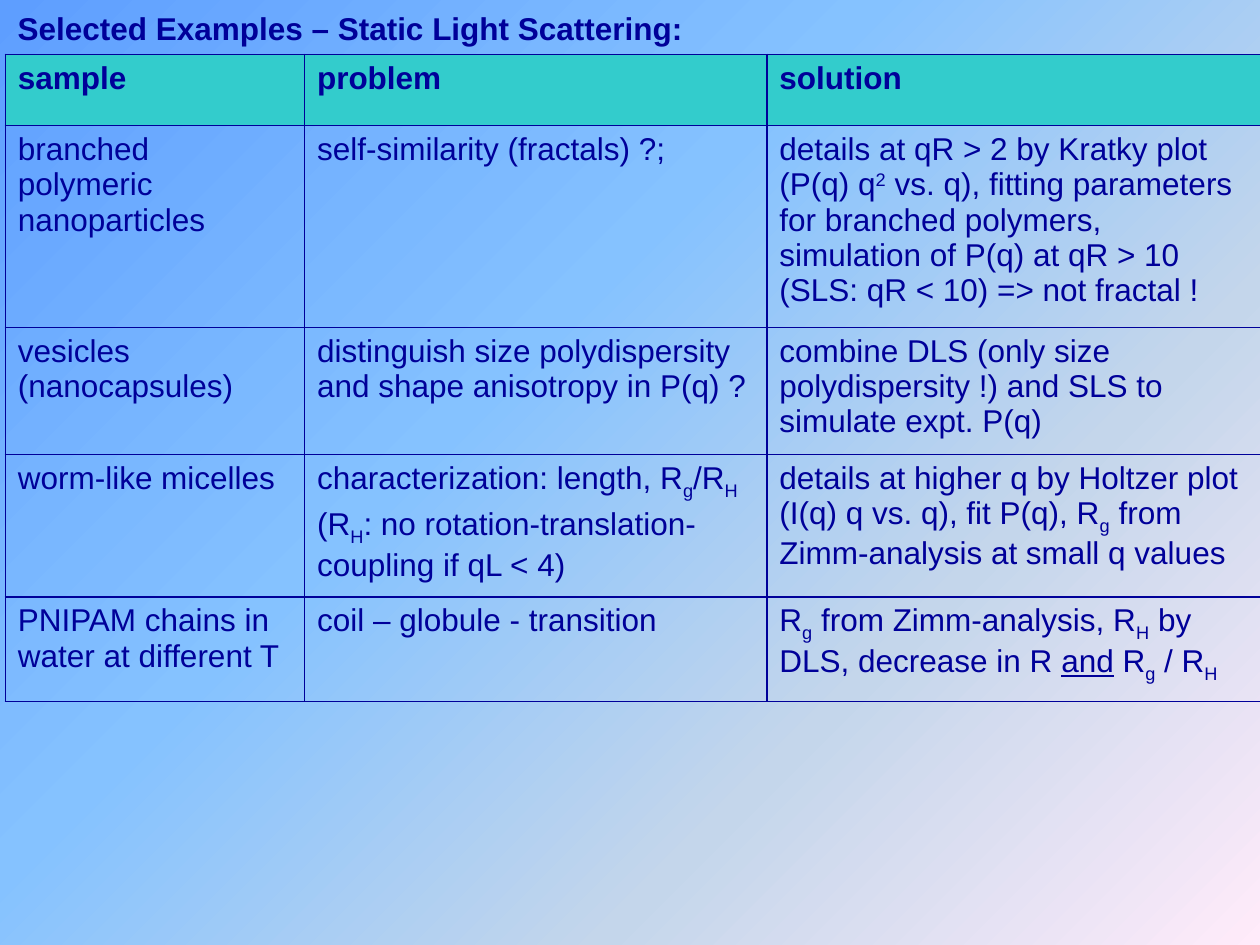
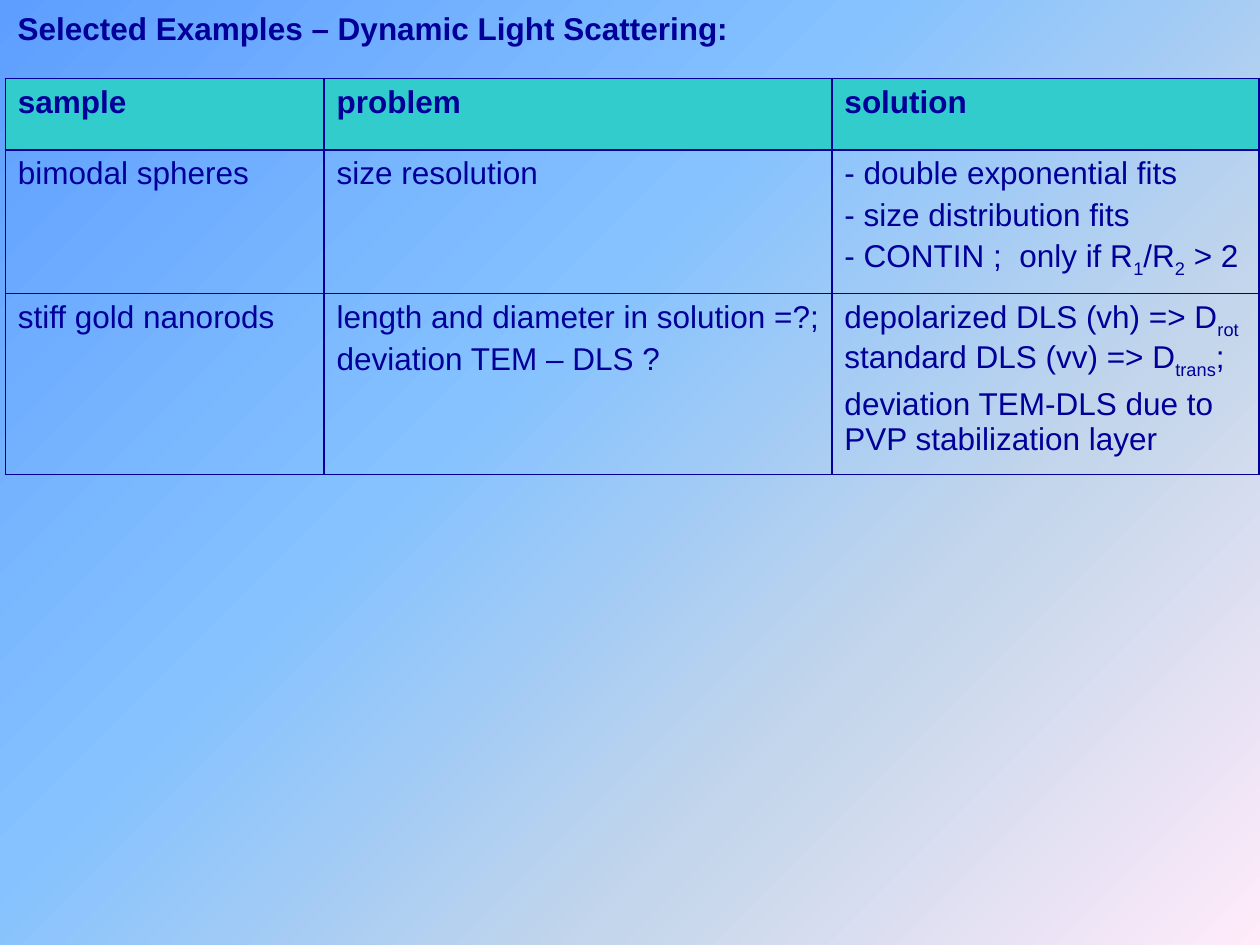
import pptx
import pptx.dml.color
import pptx.enum.text
import pptx.oxml
import pptx.oxml.ns
import pptx.util
from lxml import etree

Pt = pptx.util.Pt
qn = pptx.oxml.ns.qn

NAVY = "000099"
TEAL = "33CCCC"
DAYBREAK = [(0, "5E9EFF"), (40, "85C2FF"), (70, "C4D6EB"), (100, "FFEBFA")]
FONT, SIZE = "Arial", 18
LEFT = 3
HEADINGS = ["sample", "problem", "solution"]
BASELINES = {"_": "-25000", "^": "30000"}


def color(hex_code):
    return pptx.dml.color.RGBColor.from_string(hex_code)


def write(frame, text, bold=False, space_percent=0):
    """Lines become paragraphs; | parts runs led by _ (sub), ^ (super), ~ (underline)."""
    for index, line in enumerate(text.split("\n")):
        paragraph = frame.paragraphs[0] if index == 0 else frame.add_paragraph()
        if space_percent:
            before = etree.SubElement(paragraph._p.get_or_add_pPr(), qn("a:spcBef"))
            etree.SubElement(before, qn("a:spcPct"), val=str(space_percent * 1000))
        for part in line.split("|"):
            mark = part[0] if part[0] in "_^~" else ""
            run = paragraph.add_run()
            run.text = part[len(mark):]
            run.font.name, run.font.size = FONT, Pt(SIZE)
            run.font.bold = bold
            run.font.color.rgb = color(NAVY)
            if mark == "~":
                run.font.underline = True
            elif mark:
                run._r.get_or_add_rPr().set("baseline", BASELINES[mark])


class Deck:
    def __init__(self):
        self.presentation = pptx.Presentation()
        self.presentation.slide_width = Pt(720)
        self.presentation.slide_height = Pt(540)
        self.slide = None

    def new_slide(self):
        self.slide = self.presentation.slides.add_slide(self.presentation.slide_layouts[6])
        self.background()

    def background(self):
        fill = self.slide.background.fill
        fill.gradient()
        gradient = self.slide.background._cSld.find(".//" + qn("a:gradFill"))
        stops = gradient.find(qn("a:gsLst"))
        for stop in list(stops):
            stops.remove(stop)
        for position, hex_code in DAYBREAK:
            stop = etree.SubElement(stops, qn("a:gs"), pos=str(position * 1000))
            etree.SubElement(stop, qn("a:srgbClr"), val=hex_code)
        gradient.find(qn("a:lin")).set("ang", str(45 * 60000))

    def title(self, text, width):
        box = self.slide.shapes.add_textbox(Pt(LEFT), Pt(1.5), Pt(width), Pt(28.8))
        box.text_frame.word_wrap = False
        box.text_frame.auto_size = pptx.enum.text.MSO_AUTO_SIZE.SHAPE_TO_FIT_TEXT
        write(box.text_frame, text, bold=True)

    def borders(self, cell):
        properties = cell._tc.get_or_add_tcPr()
        for side in ("lnL", "lnR", "lnT", "lnB"):
            line = etree.SubElement(properties, qn("a:" + side), w=str(Pt(1)))
            solid = etree.SubElement(line, qn("a:solidFill"))
            etree.SubElement(solid, qn("a:srgbClr"), val=NAVY)

    def table(self, top, widths, heights, examples):
        rows = [HEADINGS] + examples
        table = self.slide.shapes.add_table(
            len(rows), len(widths), Pt(LEFT), Pt(top), Pt(sum(widths)), Pt(sum(heights))).table
        table.first_row = table.horz_banding = False
        for column, width in zip(table.columns, widths):
            column.width = Pt(width)
        for row, height in zip(table.rows, heights):
            row.height = Pt(height)
        for r, texts in enumerate(rows):
            for c, text in enumerate(texts):
                cell = table.cell(r, c)
                self.borders(cell)
                if r == 0:
                    cell.fill.solid()
                    cell.fill.fore_color.rgb = color(TEAL)
                else:
                    cell.fill.background()
                write(cell.text_frame, text, bold=r == 0, space_percent=20)


def main():
    deck = Deck()

    # Static light scattering
    deck.new_slide()
    deck.title("Selected Examples – Static Light Scattering:", 394.5)
    deck.table(31, [171, 264.2, 282], [40.8, 115, 72.6, 81.5, 59.6], [
        ["branched polymeric nanoparticles",
         "self-similarity (fractals) ?;",
         "details at qR > 2 by Kratky plot (P(q) q|^2| vs. q), fitting parameters for "
         "branched polymers, simulation of P(q) at qR > 10 (SLS: qR < 10) => not fractal !"],
        ["vesicles (nanocapsules)",
         "distinguish size polydispersity and shape anisotropy in P(q) ?",
         "combine DLS (only size polydispersity !) and SLS to simulate expt. P(q)"],
        ["worm-like micelles",
         "characterization: length, R|_g|/R|_H\n"
         "(R|_H|: no rotation-translation-coupling if qL < 4)",
         "details at higher q by Holtzer plot (I(q) q vs. q), fit P(q), R|_g"
         "| from Zimm-analysis at small q values"],
        ["PNIPAM chains in water at different T",
         "coil – globule - transition",
         "R|_g| from Zimm-analysis, R|_H| by DLS, decrease in R |~and| R|_g| / R|_H"],
    ])

    # Dynamic light scattering
    deck.new_slide()
    deck.title("Selected Examples – Dynamic Light Scattering:", 420.5)
    deck.table(44.8, [182.2, 290.2, 244.2], [40.8, 82, 103.4], [
        ["bimodal spheres",
         "size resolution",
         "- double exponential fits\n- size distribution fits\n"
         "- CONTIN ;  only if R|_1|/R|_2| > 2"],
        ["stiff gold nanorods",
         "length and diameter in solution =?;\ndeviation TEM – DLS ?",
         "depolarized DLS (vh) => D|_rot |standard DLS (vv) => D|_trans|;\n"
         "deviation TEM-DLS due to PVP stabilization layer"],
    ])

    deck.presentation.save("out.pptx")


if __name__ == "__main__":
    main()
